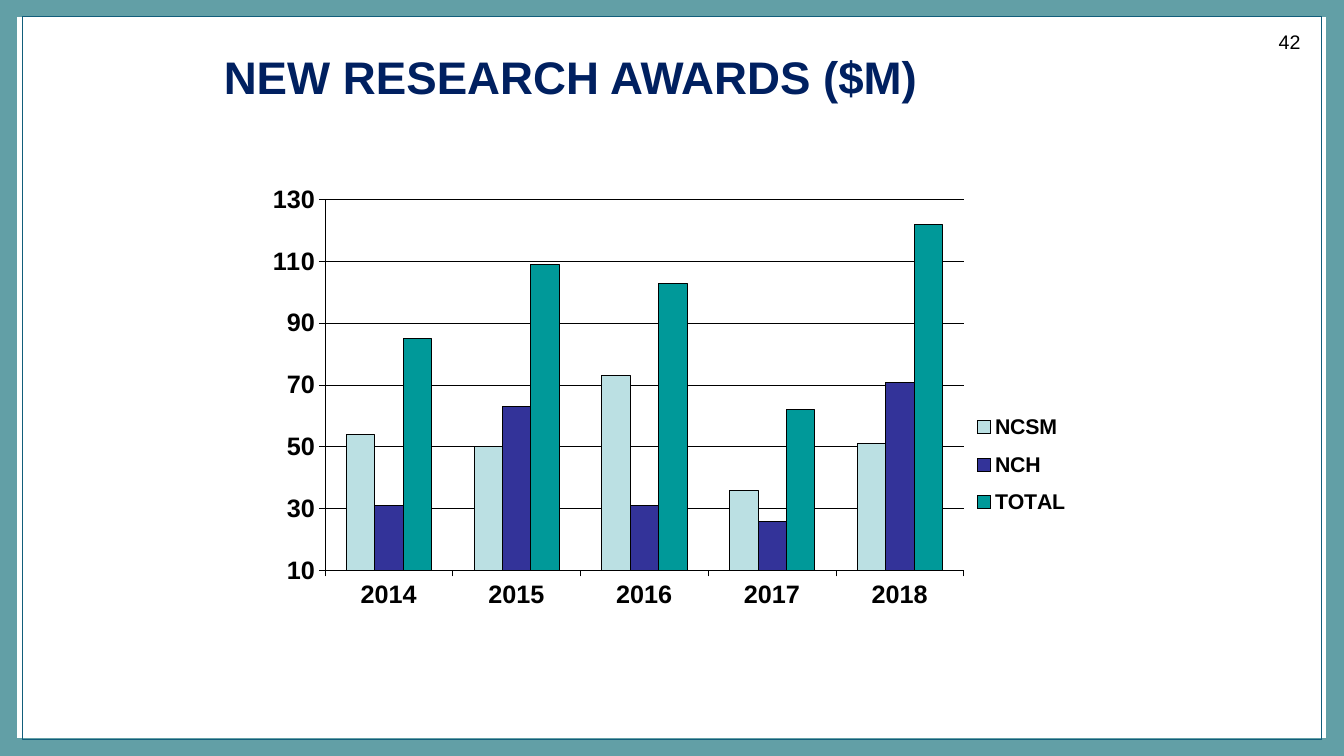
from lxml import etree
from pptx import Presentation
from pptx.chart.data import CategoryChartData as ChartData
from pptx.dml.color import RGBColor as RGB
from pptx.enum.chart import XL_CHART_TYPE as Kind, XL_LEGEND_POSITION as Side
from pptx.enum.chart import XL_TICK_LABEL_POSITION as Label, XL_TICK_MARK as Tick
from pptx.enum.shapes import MSO_SHAPE as Form
from pptx.enum.text import MSO_ANCHOR as Anchor, PP_ALIGN as Align
from pptx.oxml.ns import qn
from pptx.util import Inches, Pt

WIDE, HIGH = Inches(13.33), Inches(7.5)
HUES = {"frame": "629FA6", "rule": "125E7B", "title": "002060", "ink": "000000",
        "NCSM": "BBE0E3", "NCH": "333399", "TOTAL": "009999"}
YEARS = ["2014", "2015", "2016", "2017", "2018"]
AWARDS = {"NCSM": (54, 50, 73, 36, 51),
          "NCH": (31, 63, 31, 26, 71),
          "TOTAL": (85, 109, 103, 62, 122)}


def area(left, top, width, height):
    """Turn percentages of the slide into lengths."""
    return (round(left * WIDE / 100), round(top * HIGH / 100),
            round(width * WIDE / 100), round(height * HIGH / 100))


def hue(name):
    return RGB.from_string(HUES[name])


def style(font, size, name="ink", bold=True):
    font.name, font.size, font.bold = "Arial", Pt(size), bold
    font.color.rgb = hue(name)


def stroke(line, name="ink", width=0.25):
    line.color.rgb = hue(name)
    line.width = Pt(width)


def add_frame(slide, box, name, width):
    frame = slide.shapes.add_shape(Form.RECTANGLE, *box)
    frame.shadow.inherit = False
    frame.fill.background()
    stroke(frame.line, name, width)


def add_title(slide, text, box):
    title = slide.shapes.title
    title.left, title.top, title.width, title.height = box
    title.text_frame.text = text
    title.text_frame.vertical_anchor = Anchor.MIDDLE
    par = title.text_frame.paragraphs[0]
    par.alignment = Align.LEFT
    style(par.font, 32.6, "title")


def add_number(slide, text, box):
    frame = slide.shapes.add_textbox(*box).text_frame
    frame.word_wrap = True
    par = frame.paragraphs[0]
    par.text, par.alignment = text, Align.RIGHT
    style(par.font, 14, bold=False)


def place(part, x, y, w, h, inner=False):
    """Fix the plot or legend at percentages of the chart."""
    for old in part.findall(qn("c:layout")):
        part.remove(old)
    layout = etree.Element(qn("c:layout"))
    manual = etree.SubElement(layout, qn("c:manualLayout"))
    pairs = [("layoutTarget", "inner")] if inner else []
    pairs += [("xMode", "edge"), ("yMode", "edge"),
              ("x", x / 100), ("y", y / 100), ("w", w / 100), ("h", h / 100)]
    for tag, val in pairs:
        etree.SubElement(manual, qn("c:" + tag)).set("val", str(val))
    # The layout leads the plot area but follows a legend's position
    part.insert(0 if inner else 1, layout)


def add_bars(slide, box):
    data = ChartData()
    data.categories = YEARS
    for name, vals in AWARDS.items():
        data.add_series(name, vals)
    chart = slide.shapes.add_chart(Kind.COLUMN_CLUSTERED, *box, data).chart
    chart.has_title = False
    style(chart.font, 18)

    # Columns
    plot = chart.plots[0]
    plot.gap_width, plot.overlap, plot.vary_by_categories = 150, 0, False
    for group in plot.series:
        group.format.fill.solid()
        group.format.fill.fore_color.rgb = hue(group.name)
        stroke(group.format.line)

    # Axes
    for axis in (chart.category_axis, chart.value_axis):
        axis.major_tick_mark, axis.minor_tick_mark = Tick.OUTSIDE, Tick.NONE
        style(axis.tick_labels.font, 18)
        stroke(axis.format.line)
    chart.category_axis.tick_label_position = Label.LOW
    scale = chart.value_axis
    scale.minimum_scale, scale.maximum_scale, scale.major_unit = 10, 130, 20
    stroke(scale.major_gridlines.format.line)

    # Legend
    chart.has_legend = True
    key = chart.legend
    key.position, key.include_in_layout = Side.RIGHT, False
    style(key.font, 15.2)

    space = chart.element.find(qn("c:chart"))
    place(space.find(qn("c:plotArea")), 7.6, 5.7, 76.3, 80.6, inner=True)
    place(space.find(qn("c:legend")), 84.3, 49.6, 13, 27.5)


def main():
    deck = Presentation()
    deck.slide_width, deck.slide_height = WIDE, HIGH
    slide = deck.slides.add_slide(deck.slide_layouts[5])
    # Border
    add_frame(slide, area(0, 0, 100, 100), "frame", 25)
    add_frame(slide, area(1.65, 2.2, 96.7, 95.6), "rule", 0.75)
    # Content
    add_title(slide, "NEW RESEARCH AWARDS ($M)", area(15.9, 1.7, 58.7, 16.7))
    add_number(slide, "42", area(93.3, 3.3, 4.2, 5.3))
    add_bars(slide, area(19.43, 22.9, 62.3, 60.9))
    deck.save("out.pptx")


if __name__ == "__main__":
    main()
